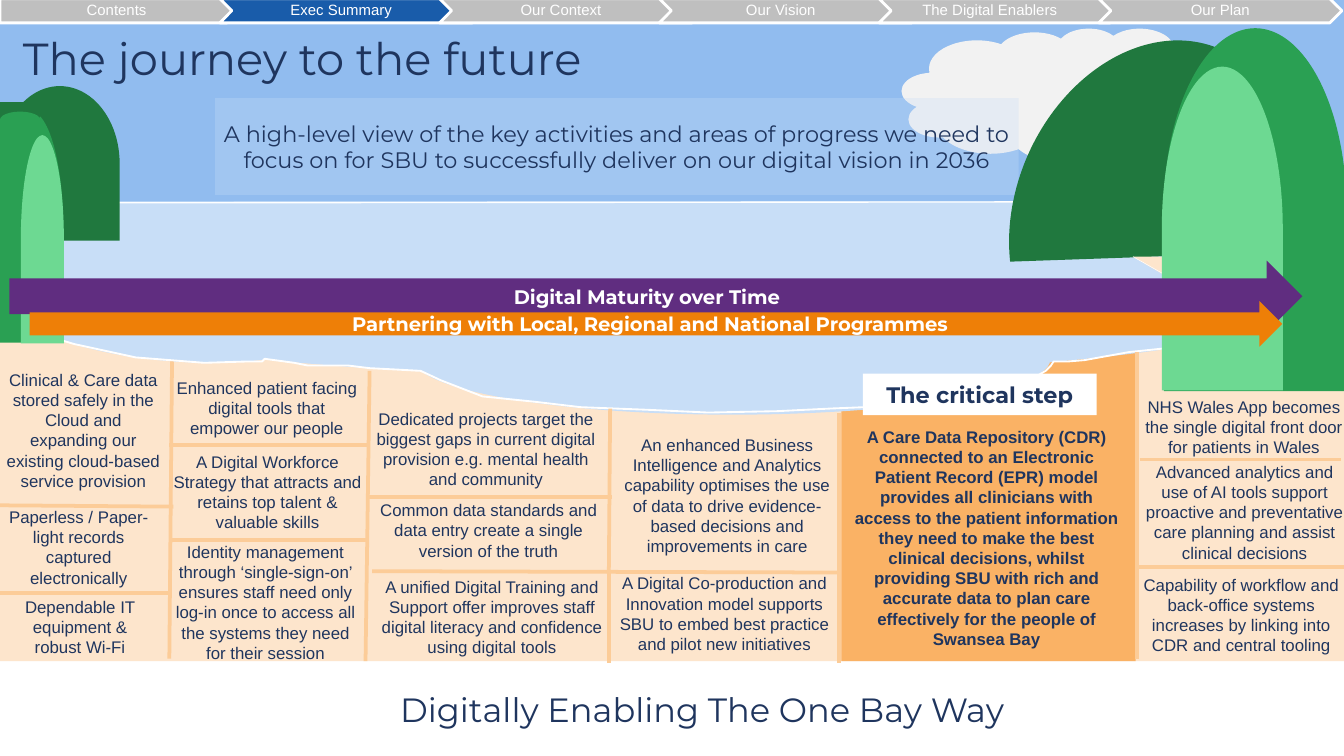
from lxml.etree import SubElement
from pptx import Presentation
from pptx.dml.color import RGBColor
from pptx.enum.shapes import MSO_CONNECTOR as Connector, MSO_SHAPE as Shape
from pptx.enum.text import MSO_ANCHOR as Anchor, PP_ALIGN as Align
from pptx.oxml.ns import qn
from pptx.util import Inches, Pt

COLUMNS, ROWS = 100, 56.25
COLORS = {
    "white": "FFFFFF", "navy": "1F355E", "sand": "FDE5CC", "critical": "FAB265",
    "divider": "FCCC98", "sky": "91BCEF", "water": "C8DEF7", "cloud": "F2F2F2",
    "dark_green": "20783E", "green": "2AA053", "light_green": "6DD992",
    "purple": "602D80", "orange": "EE7F07", "grey": "BFBFBF", "blue": "195CAA",
}
PADDED = (0.6, 0.6, 0.6, 0.6)
FLUSH = (0, 0, 0, 0)

SHORE = [
    (0, 21.6), (0.6, 23.3), (2.2, 24.6), (5.5, 25.6), (10.1, 26.6), (15.2, 27),
    (18.5, 26.9), (19.5, 26.9), (19.7, 26.7), (21.9, 27), (22.9, 27.2), (25.9, 27.2),
    (27.5, 27.4), (29.5, 27.5), (31.3, 27.6), (32.8, 28.3), (35.9, 29.5), (39.8, 29.9),
    (43.2, 30.3), (48.3, 30.5), (52.7, 30.7), (57.8, 30.6), (61.9, 30.4), (66.8, 30.2),
    (69, 30), (71.9, 29.5), (74.8, 28.9), (76.6, 28.3), (77.8, 27.6), (78.2, 27.2),
    (78.4, 26.9), (79.5, 26.9), (80.7, 26.8), (84, 26.2), (89.8, 25.6), (92.6, 24.9),
    (96.5, 23.8),
]

LAND = [
    (Shape.RECTANGLE, (0, 21.4, 100, 27.8), "sand", 0),
    (Shape.RECTANGLE, (62.6, 25.5, 21.9, 23.7), "critical", 0),
    (Shape.FLOWCHART_DELAY, (43.4, -28.5, 13.2, 100), "water", 90),
    (Shape.RECTANGLE, (0, 0, 100, 15), "sky", 0),
    (Shape.CLOUD, (67.1, 2.1, 22.8, 9.9), "cloud", 0),
]
BAYS = [
    (Shape.CHORD, (9.1, 9.9, 8.2, 25.8), "water", 274),
    (Shape.CHORD, (50.4, 3.1, 8.2, 47.3), "water", 270),
]
RIGHT_HILLS = [
    (Shape.FLOWCHART_DELAY, (79.9, 8.8, 27, 13.6), "green", 270),
    (Shape.RIGHT_TRIANGLE, (84.3, 19.1, 2.2, 1.3), "sand", 180),
]
FRONT_HILLS = [
    (Shape.FLOWCHART_DELAY, (78.9, 12.5, 24.1, 9), "light_green", 270),
    (Shape.FLOWCHART_DELAY, (-1.3, 7.7, 11.5, 8.9), "dark_green", 270),
    (Shape.FLOWCHART_DELAY, (-6.3, 14.5, 17.2, 4.8), "green", 270),
    (Shape.RECTANGLE, (0, 8.3, 1.5, 6.1), "green", 0),
    (Shape.FLOWCHART_TERMINATOR, (0, 7.6, 3, 1.6), "dark_green", 0),
    (Shape.RECTANGLE, (0, 7.6, 0.5, 1.6), "dark_green", 0),
    (Shape.FLOWCHART_TERMINATOR, (-0.4, 8.7, 3.8, 3), "green", 270),
    (Shape.FLOWCHART_DELAY, (-4.6, 16.2, 15.5, 3.2), "light_green", 270),
]

PADDED_STEPS = [
    ((0, 43.8, 11.9, 5.7), "Dependable IT equipment & robust Wi-Fi"),
    ((-0.1, 37.1, 11.9, 7.2), "Paperless / Paper-light records captured electronically"),
    ((-0.3, 26.9, 13, 10.2), "Clinical & Care data stored safely in the Cloud and expanding our existing cloud-based service provision"),
    ((12.3, 33, 15.2, 7.2), "A Digital Workforce Strategy that attracts and retains top talent & valuable skills"),
    ((12.2, 27.5, 15.3, 5.7), "Enhanced patient facing digital tools that empower our people"),
    ((12, 39.7, 15.5, 10.2), "Identity management through ‘single-sign-on’ ensures staff need only log-in once to access all the systems they need\vfor their session"),
    ((26.8, 29.8, 18.7, 7.2), "Dedicated projects target the biggest gaps in current digital provision e.g. mental health and community"),
    ((27.4, 42.3, 18.4, 7.2), "A unified Digital Training and Support offer improves staff digital literacy and confidence using digital tools"),
    ((27, 36.6, 18.7, 5.7), "Common data standards and data entry create a single version of the truth"),
]
FLUSH_STEPS = [
    ((45.6, 42.9, 16.6, 5.5), "A Digital Co-production and Innovation model supports SBU to embed best practice and pilot new initiatives"),
    ((46, 34.1, 16.2, 5.5), "An enhanced Business Intelligence and Analytics capability optimises the use of data to drive evidence-based decisions and improvements in care"),
    ((84.7, 29, 15.7, 5.5), "NHS Wales App becomes the single digital front door for patients in Wales"),
    ((84.9, 35.3, 15.4, 5.6), "Advanced analytics and use of AI tools support proactive and preventative care planning and assist clinical decisions"),
    ((85, 43, 14.7, 5.5), "Capability of workflow and back-office systems increases by linking into CDR and central tooling"),
]
CRITICAL_STEP = (
    "A Care Data Repository (CDR) connected to an Electronic Patient Record (EPR) model "
    "provides all clinicians with access to the patient information they need to make the best "
    "clinical decisions, whilst providing SBU with rich and accurate data to plan care "
    "effectively for the people of Swansea Bay"
)
DIVIDERS = [
    (0, 37.6, 12.9, 37.7), (-0.1, 44.1, 12.8, 44.1), (12.8, 26.9, 12.6, 49),
    (27.5, 27.6, 27.2, 49.2), (12.6, 40.2, 27.2, 40.2), (12.6, 33.1, 27.4, 33.1),
    (27.4, 37, 45.5, 37), (27.7, 42.5, 62.4, 42.6), (45.4, 30.4, 45.3, 42.7),
    (45.3, 42.4, 45.3, 49.3), (62.4, 30.7, 62.4, 49.3), (84.6, 26.2, 84.6, 49),
    (84.8, 34.2, 99.8, 34.2), (84.6, 42.2, 100, 42.2),
]
TABS = [
    ("Contents", 17.8), ("Exec Summary", 19.7), ("Our Context", 19.7),
    ("Our Vision", 19.7), ("The Digital Enablers", 18.1), ("Our Plan", 18.1),
]
TAB_STEP = 16.35


class JourneySlide:
    def __init__(self, presentation):
        presentation.slide_width, presentation.slide_height = Inches(10), Inches(5.625)
        self.column = presentation.slide_width / COLUMNS
        self.row = presentation.slide_height / ROWS
        self.slide = presentation.slides.add_slide(presentation.slide_layouts[6])
        self.shapes = self.slide.shapes

    def color(self, name):
        return RGBColor.from_string(COLORS[name])

    def place(self, *lengths):
        return [round(length * (self.row if index % 2 else self.column))
                for index, length in enumerate(lengths)]

    def shape(self, kind, box, fill, rotation=0, outline=None, alpha=None):
        shape = self.shapes.add_shape(kind, *self.place(*box))
        shape.shadow.inherit = False
        shape.rotation = rotation
        shape.fill.solid()
        shape.fill.fore_color.rgb = self.color(fill)
        if alpha:
            tint = shape._element.spPr.find(".//" + qn("a:srgbClr"))
            SubElement(tint, qn("a:alpha")).set("val", str(alpha * 1000))
        if outline:
            shape.line.color.rgb = self.color("white")
            shape.line.width = Pt(outline)
        else:
            shape.line.fill.background()
        return shape

    def scenery(self, parts):
        for part in parts:
            self.shape(*part)

    def label(self, shape, text, size, font="Arial", color="navy", bold=False,
              insets=FLUSH, align=Align.CENTER, spacing=None):
        frame = shape.text_frame
        frame.text = text
        frame.word_wrap = True
        frame.vertical_anchor = Anchor.MIDDLE
        (frame.margin_left, frame.margin_top,
         frame.margin_right, frame.margin_bottom) = self.place(*insets)
        paragraph = frame.paragraphs[0]
        paragraph.alignment = align
        paragraph.line_spacing = spacing
        for run in paragraph.runs:
            run.font.name, run.font.size, run.font.bold = font, Pt(size), bold
            run.font.color.rgb = self.color(color)

    def text(self, box, text, size=9, **style):
        self.label(self.shapes.add_textbox(*self.place(*box)), text, size, **style)

    def line(self, ends, color, width):
        connector = self.shapes.add_connector(Connector.STRAIGHT, *self.place(*ends))
        connector.line.color.rgb = self.color(color)
        connector.line.width = Pt(width)
        SubElement(connector._element.spPr, qn("a:effectLst"))

    def shoreline(self, points):
        start, *rest = [self.place(*point) for point in points]
        builder = self.shapes.build_freeform(*start)
        builder.add_line_segments(rest, close=False)
        shape = builder.convert_to_shape()
        shape.shadow.inherit = False
        shape.fill.background()
        shape.line.color.rgb = self.color("white")
        shape.line.width = Pt(1)

    def arrow(self, box, fill, text):
        self.label(self.shape(Shape.RIGHT_ARROW, box, fill), text, 10.5,
                   font="Montserrat", color="white", bold=True)

    def navigation(self, tabs, current):
        shapes = []
        for index, (title, width) in enumerate(tabs):
            kind = Shape.CHEVRON if index else Shape.PENTAGON
            fill = "blue" if title == current else "grey"
            shape = self.shape(kind, (index * TAB_STEP, -0.1, width, 1.8), fill, outline=1.5)
            left = 2 if index in (0, len(tabs) - 1) else 0.4
            self.label(shape, title, 8, color="white", insets=(left, 0.2, 2, 0.2), spacing=0.9)
            shapes.append(shape)
        self.shapes.add_group_shape(shapes)


def main():
    presentation = Presentation()
    journey = JourneySlide(presentation)

    journey.scenery(LAND)
    journey.text((24.7, 51, 55.1, 3.6), "Digitally Enabling The One Bay Way", 18, font="Montserrat")
    summary = journey.shape(Shape.RECTANGLE, (16, 7.3, 59.8, 7.2), "water", alpha=30)
    journey.label(summary, "A high-level view of the key activities and areas of progress we need to "
                  "focus on for SBU to successfully deliver on our digital vision in 2036",
                  12, font="Montserrat", insets=PADDED)
    journey.line((0.1, 15.1, 100, 15), "white", 0.75)
    journey.scenery(BAYS)
    journey.shoreline(SHORE)
    hill = journey.shape(Shape.CHORD, (72.6, 5.6, 25.9, 19.8), "dark_green", 114.1)
    hill.adjustments[0], hill.adjustments[1] = 27, 159.15
    journey.scenery(RIGHT_HILLS)
    journey.line((84.3, 19.1, 86.6, 20.4), "white", 0.25)
    journey.scenery(FRONT_HILLS)
    journey.arrow((0.7, 19.4, 96.2, 5.3), "purple", "Digital Maturity over Time")

    for box, text in PADDED_STEPS:
        journey.text(box, text, insets=PADDED)
    for box, text in FLUSH_STEPS:
        journey.text(box, text)
    journey.text((63.4, 31.7, 20, 16.6), CRITICAL_STEP, bold=True)
    for ends in DIVIDERS:
        journey.line(ends, "divider", 2)

    journey.arrow((2.2, 22.4, 93.2, 3.4), "orange",
                  "Partnering with Local, Regional and National Programmes")
    critical = journey.shape(Shape.RECTANGLE, (64.2, 27.8, 17.4, 3.1), "white")
    journey.label(critical, "The critical step", 12, font="Montserrat", bold=True, insets=PADDED)
    journey.text((1, -0.1, 91.8, 8.8), "The journey to the future", 24, font="Montserrat",
                 insets=(0.7, 0.4, 0.7, 0.4), align=Align.LEFT)
    journey.navigation(TABS, "Exec Summary")
    presentation.save("out.pptx")


if __name__ == "__main__":
    main()
